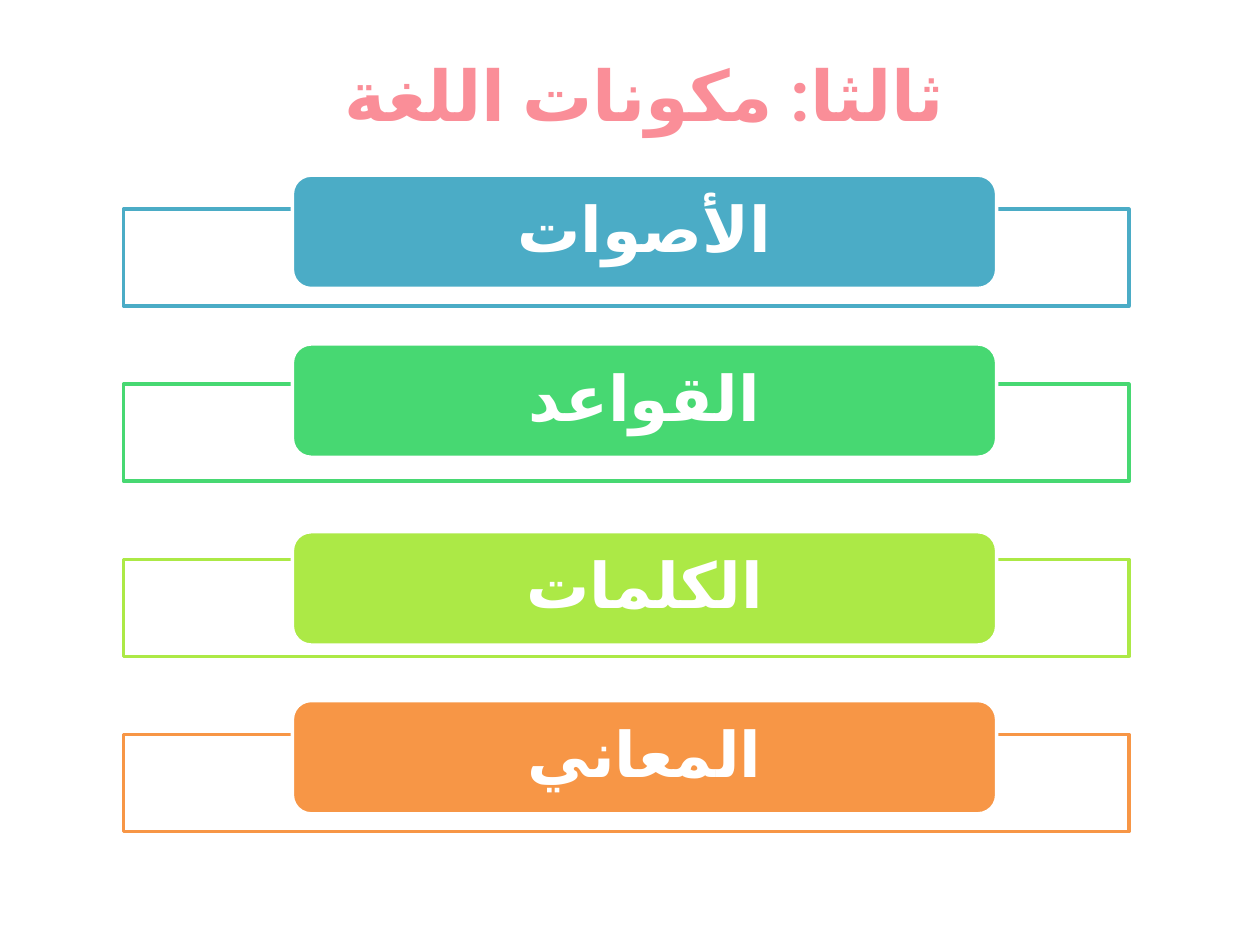
from lxml.etree import SubElement
from pptx import Presentation
from pptx.dml.color import RGBColor
from pptx.enum.shapes import MSO_SHAPE as Shape
from pptx.enum.text import MSO_ANCHOR as Anchor, MSO_AUTO_SIZE as AutoSize, PP_ALIGN as Align
from pptx.oxml.ns import qn
from pptx.util import Inches, Pt

FONT = "Roboto"
COLORS = {
    "white": "FFFFFF",
    "pink": "FA8E98",
    "blue": "4BACC6",
    "green": "47D872",
    "lime": "ACE946",
    "orange": "F79646",
}
HEADING = "ثالثا: مكونات اللغة"
COMPONENTS = [
    ("الأصوات", "blue", 1.39),
    ("القواعد", "green", 2.73),
    ("الكلمات", "lime", 4.22),
    ("المعاني", "orange", 5.56),
]
FRAME_TOP, FRAME_STEP = 1.66, 1.39


def rgb(color):
    return RGBColor.from_string(COLORS[color])


def write(frame, text, size, color, anchor, inset=0.1, before=0, after=0, spacing=1.0):
    frame.word_wrap = True
    frame.auto_size = AutoSize.NONE
    frame.vertical_anchor = anchor
    frame.margin_left = frame.margin_right = Inches(inset)
    paragraph = frame.paragraphs[0]
    paragraph.alignment = Align.CENTER
    paragraph.space_before = Pt(before)
    paragraph.space_after = Pt(after)
    paragraph.line_spacing = spacing
    paragraph._p.get_or_add_pPr().set("rtl", "1")
    run = paragraph.add_run()
    run.text = text
    run.font.name = FONT
    run.font.size = Pt(size)
    run.font.bold = True
    run.font.color.rgb = rgb(color)
    properties = run._r.get_or_add_rPr()
    properties.set("lang", "ar-SA")
    for script in ("a:ea", "a:cs"):
        SubElement(properties, qn(script)).set("typeface", FONT)


def add_box(slide, kind, left, top, width, height, fill, line):
    box = slide.shapes.add_shape(kind, Inches(left), Inches(top), Inches(width), Inches(height))
    box.shadow.inherit = False
    box.fill.solid()
    box.fill.fore_color.rgb = rgb(fill)
    box.line.color.rgb = rgb(line)
    box.line.width = Pt(2)
    return box


def main():
    deck = Presentation()
    deck.slide_width, deck.slide_height = Inches(10), Inches(7.5)
    slide = deck.slides.add_slide(deck.slide_layouts[5])

    heading = slide.shapes.title
    heading.left, heading.top = Inches(0.43), Inches(0.36)
    heading.width, heading.height = Inches(9.37), Inches(0.95)
    write(heading.text_frame, HEADING, 40, "pink", Anchor.TOP, before=8)

    for row, (component, color, label_top) in enumerate(COMPONENTS):
        frame_top = FRAME_TOP + row * FRAME_STEP
        add_box(slide, Shape.RECTANGLE, 0.98, frame_top, 7.98, 0.77, "white", color)
        label = add_box(slide, Shape.ROUNDED_RECTANGLE, 2.32, label_top, 5.59, 0.9, color, "white")
        label.text_frame.margin_top = label.text_frame.margin_bottom = 0
        write(label.text_frame, component, 36, "white", Anchor.MIDDLE,
              inset=0.21, after=12.6, spacing=0.9)

    deck.save("out.pptx")


if __name__ == "__main__":
    main()
